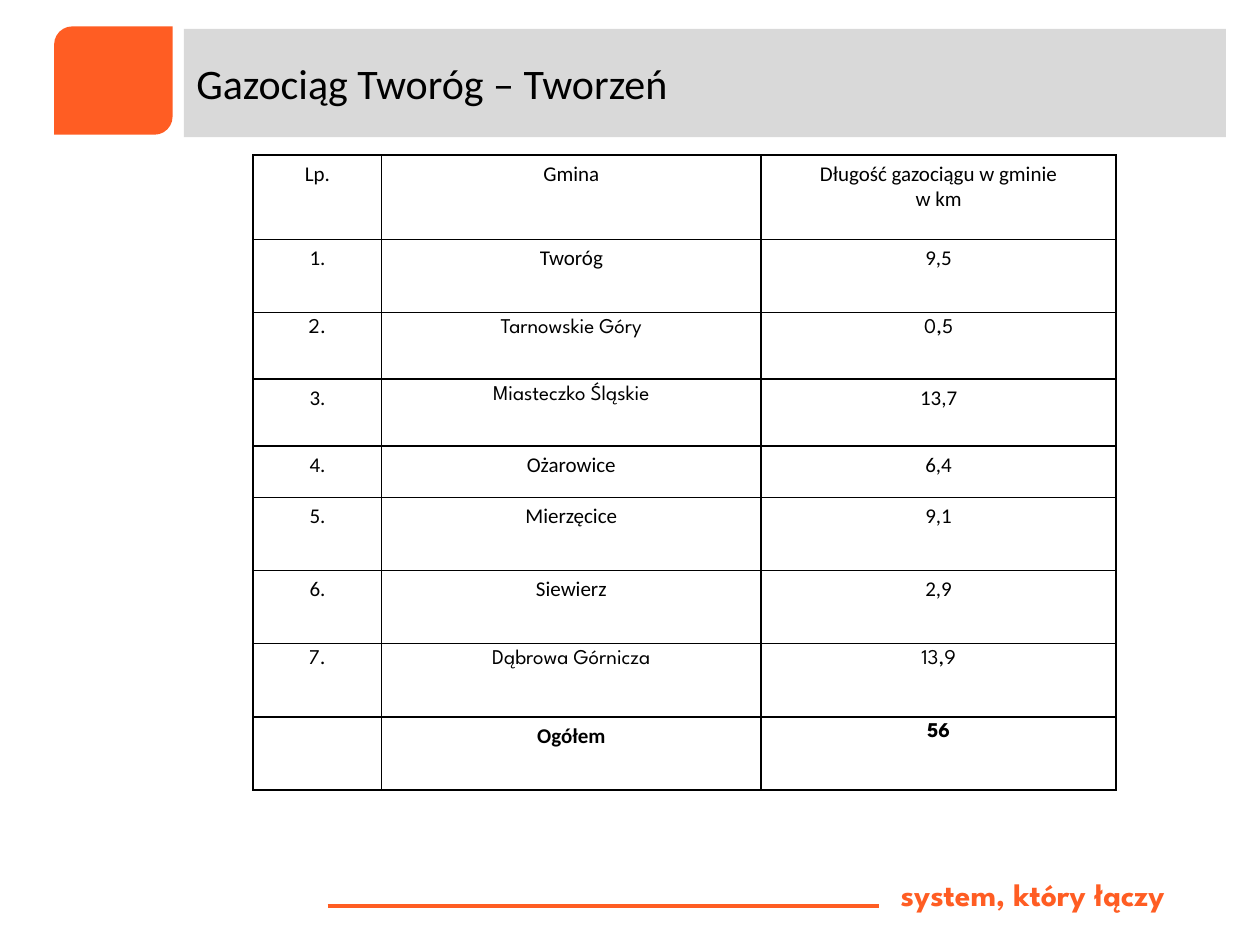
from pptx import Presentation
from pptx.dml.color import RGBColor
from pptx.enum.shapes import MSO_CONNECTOR, MSO_SHAPE
from pptx.enum.text import MSO_ANCHOR, PP_ALIGN
from pptx.oxml import parse_xml
from pptx.oxml.ns import nsdecls
from pptx.util import Inches, Pt

ORANGE = RGBColor(0xFF, 0x5D, 0x23)
GREY = RGBColor(0xD9, 0xD9, 0xD9)
WHITE = RGBColor(0xFF, 0xFF, 0xFF)
BLACK = RGBColor(0, 0, 0)
BODY, ACCENT = "Calibri", "League Spartan"


def write(paragraph, text, color, **font_format):
    run = paragraph.add_run()
    run.text = text
    run.font.color.rgb = color
    for name, value in font_format.items():
        setattr(run.font, name, value)


presentation = Presentation()
presentation.slide_width = Inches(10)
presentation.slide_height = Inches(7.5)
slide = presentation.slides.add_slide(presentation.slide_layouts[6])

footer_line = slide.shapes.add_connector(
    MSO_CONNECTOR.STRAIGHT, Inches(2.6), Inches(7.19), Inches(6.98), Inches(7.19))
footer_line.line.color.rgb = ORANGE
footer_line.line.width = Pt(2.25)
footer_line._element.spPr.append(parse_xml(f"<a:effectLst {nsdecls('a')}/>"))

blocks = [
    (MSO_SHAPE.RECTANGLE, (7.05, 6.9, 2.6, 0.39), WHITE, "system, który łączy", ORANGE,
     {"name": ACCENT, "size": Pt(18), "bold": True}),
    (MSO_SHAPE.ROUND_2_DIAG_RECTANGLE, (0.43, 0.21, 0.94, 0.86), ORANGE, "", BLACK, {}),
    (MSO_SHAPE.RECTANGLE, (1.46, 0.23, 8.27, 0.86), GREY, "Gazociąg Tworóg – Tworzeń", BLACK,
     {"name": BODY, "size": Pt(24)}),
]
for kind, place, fill, text, color, font_format in blocks:
    shape = slide.shapes.add_shape(kind, *map(Inches, place))
    shape.shadow.inherit = False
    shape.fill.solid()
    shape.fill.fore_color.rgb = fill
    shape.line.fill.background()
    if text:
        shape.text_frame.vertical_anchor = MSO_ANCHOR.MIDDLE
        paragraph = shape.text_frame.paragraphs[0]
        paragraph.alignment = PP_ALIGN.LEFT
        write(paragraph, text, color, **font_format)

column_widths = [1.02, 3.01, 2.82]
row_heights = [0.67, 0.58, 0.53, 0.53, 0.41, 0.58, 0.58, 0.58, 0.58]
rows = [
    ("Lp.", "Gmina", "Długość gazociągu w gminie\nw km"),
    ("1.", "Tworóg", "9,5"),
    ("2.", "Tarnowskie Góry", "0,5"),
    ("3.", "Miasteczko Śląskie", "13,7"),
    ("4.", "Ożarowice", "6,4"),
    ("5.", "Mierzęcice", "9,1"),
    ("6.", "Siewierz", "2,9"),
    ("7.", "Dąbrowa Górnicza", "13,9"),
    ("", "Ogółem", "56"),
]
accent_texts = {"2.", "Tarnowskie Góry", "0,5", "Miasteczko Śląskie",
                "7.", "Dąbrowa Górnicza", "13,9", "56"}

table = slide.shapes.add_table(
    len(rows), len(column_widths), Inches(2.01), Inches(1.23),
    Inches(sum(column_widths)), Inches(sum(row_heights))).table
for flag in ("first_row", "horz_banding"):
    setattr(table, flag, False)
for column, width in zip(table.columns, column_widths):
    column.width = Inches(width)
for row, height in zip(table.rows, row_heights):
    row.height = Inches(height)

for row_index, texts in enumerate(rows):
    for column_index, text in enumerate(texts):
        cell = table.cell(row_index, column_index)
        properties = cell._tc.get_or_add_tcPr()
        for side in ("lnL", "lnR", "lnT", "lnB"):
            properties.append(parse_xml(
                f'<a:{side} {nsdecls("a")} w="{Pt(1)}"><a:solidFill>'
                f'<a:srgbClr val="{BLACK}"/></a:solidFill></a:{side}>'))
        cell.fill.background()
        frame = cell.text_frame
        for line_index, line in enumerate(text.split("\n")):
            paragraph = frame.add_paragraph() if line_index else frame.paragraphs[0]
            paragraph.alignment = PP_ALIGN.CENTER
            if line:
                write(paragraph, line, BLACK, size=Pt(12), bold=row_index == len(rows) - 1,
                      name=ACCENT if text in accent_texts else BODY)

presentation.save("out.pptx")
